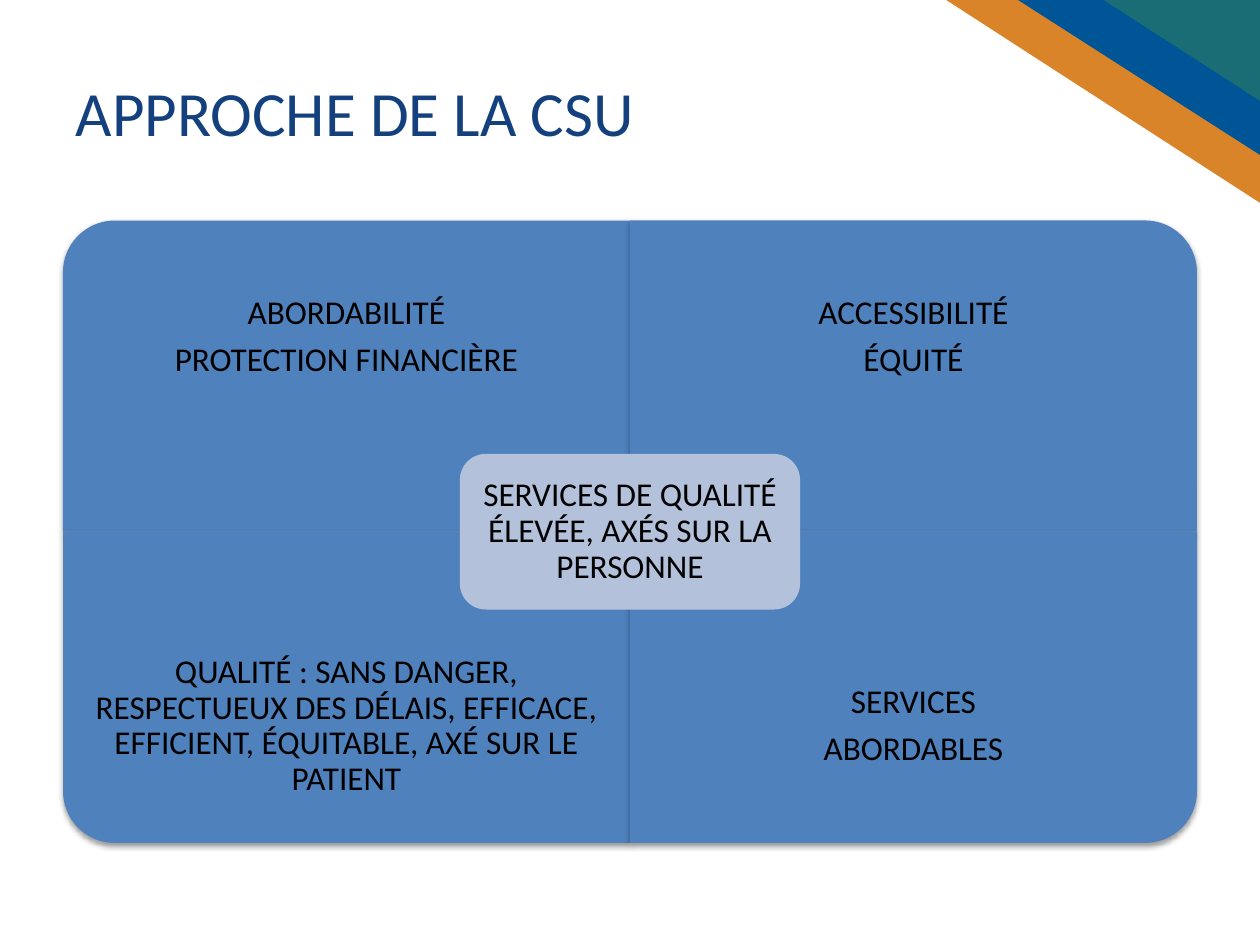
from dataclasses import dataclass

from lxml.etree import SubElement
from pptx import Presentation
from pptx.dml.color import RGBColor
from pptx.enum.shapes import MSO_SHAPE
from pptx.enum.text import MSO_ANCHOR, PP_ALIGN
from pptx.oxml.ns import qn
from pptx.shapes.autoshape import Shape
from pptx.slide import Slide
from pptx.util import Inches, Pt


@dataclass(frozen=True)
class Theme:
    font: str = "Calibri"
    title_size: float = 36
    label_size: float = 19
    line_spacing: float = 0.9
    space_after: float = 6.65
    title: str = "14417E"
    label: str = "000000"
    quadrant: str = "4F81BD"
    core: str = "B3C1DB"
    shadow: str = "000000"


@dataclass(frozen=True)
class Box:
    left: float
    top: float
    width: float
    height: float

    def lengths(self) -> tuple[Inches, ...]:
        return tuple(Inches(v) for v in (self.left, self.top, self.width, self.height))

    def inset(self, margin: float) -> "Box":
        return Box(self.left + margin, self.top + margin,
                   self.width - 2 * margin, self.height - 2 * margin)

    def turned(self) -> "Box":
        """Swap width and height around the same centre."""
        shift = (self.width - self.height) / 2
        return Box(self.left + shift, self.top - shift, self.height, self.width)


@dataclass(frozen=True)
class Stripe:
    width: float
    height: float
    color: str


@dataclass(frozen=True)
class Quadrant:
    column: int
    row: int
    rotation: int
    lines: tuple[str, ...]


THEME = Theme()
SLIDE_WIDTH, SLIDE_HEIGHT = 10, 7.5
MATRIX = Box(0.5, 1.75, 9, 4.94)
CELL_WIDTH, CELL_HEIGHT = MATRIX.width / 2, MATRIX.height / 2
LABEL_HEIGHT = CELL_HEIGHT * 0.75
CORE_WIDTH, CORE_HEIGHT = CELL_WIDTH * 0.6, CELL_HEIGHT / 2

STRIPES = (
    Stripe(2.49, 1.61, "D98429"),
    Stripe(1.92, 1.23, "005596"),
    Stripe(1.24, 0.8, "1B6D75"),
)
QUADRANTS = (
    Quadrant(0, 0, 270, ("ABORDABILITÉ", "PROTECTION FINANCIÈRE")),
    Quadrant(1, 0, 0, ("ACCESSIBILITÉ", "ÉQUITÉ")),
    Quadrant(0, 1, 180, ("QUALITÉ : SANS DANGER, RESPECTUEUX DES DÉLAIS, EFFICACE, "
                         "EFFICIENT, ÉQUITABLE, AXÉ SUR LE PATIENT",)),
    Quadrant(1, 1, 90, ("SERVICES", "ABORDABLES")),
)
CORE_LINES = ("SERVICES DE QUALITÉ ÉLEVÉE, AXÉS SUR LA PERSONNE",)


def add_filled(slide: Slide, kind: MSO_SHAPE, box: Box, color: str, rotation: int = 0) -> Shape:
    shape = slide.shapes.add_shape(kind, *box.lengths())
    shape.rotation = rotation
    shape.shadow.inherit = False
    shape.fill.solid()
    shape.fill.fore_color.rgb = RGBColor.from_string(color)
    shape.line.fill.background()
    return shape


def add_drop_shadow(shape: Shape) -> None:
    effects = shape.element.spPr.find(qn("a:effectLst"))
    shadow = SubElement(effects, qn("a:outerShdw"), blurRad=str(Pt(3.1)),
                        dist=str(Pt(1.6)), dir="5400000", rotWithShape="0")
    color = SubElement(shadow, qn("a:srgbClr"), val=THEME.shadow)
    SubElement(color, qn("a:alpha"), val="38000")


def add_label(slide: Slide, box: Box, lines: tuple[str, ...], margin: float) -> None:
    frame = slide.shapes.add_textbox(*box.lengths()).text_frame
    frame.word_wrap = True
    frame.vertical_anchor = MSO_ANCHOR.MIDDLE
    frame.margin_left = frame.margin_right = Inches(margin)
    frame.margin_top = frame.margin_bottom = Inches(margin)
    for index, line in enumerate(lines):
        paragraph = frame.add_paragraph() if index else frame.paragraphs[0]
        paragraph.alignment = PP_ALIGN.CENTER
        paragraph.line_spacing = THEME.line_spacing
        paragraph.space_after = Pt(THEME.space_after)
        add_run(paragraph, line, THEME.label_size, THEME.label)


def add_run(paragraph, text: str, size: float, color: str) -> None:
    run = paragraph.add_run()
    run.text = text
    run.font.name = THEME.font
    run.font.size = Pt(size)
    run.font.color.rgb = RGBColor.from_string(color)


def add_stripe(slide: Slide, stripe: Stripe) -> None:
    corner = Box(SLIDE_WIDTH - stripe.width, 0, stripe.width, stripe.height)
    add_filled(slide, MSO_SHAPE.RIGHT_TRIANGLE, corner, stripe.color, 180)


def set_title(slide: Slide, text: str) -> None:
    title = slide.shapes.title
    title.left, title.top, title.width, title.height = Box(0.5, 0.3, 8.27, 1.25).lengths()
    title.text_frame.vertical_anchor = MSO_ANCHOR.MIDDLE
    paragraph = title.text_frame.paragraphs[0]
    paragraph.alignment = PP_ALIGN.LEFT
    paragraph.line_spacing = THEME.line_spacing
    add_run(paragraph, text, THEME.title_size, THEME.title)


def add_quadrant(slide: Slide, quadrant: Quadrant) -> None:
    """Draw a cell whose rounded corner points outwards, with its label."""
    cell = Box(MATRIX.left + quadrant.column * CELL_WIDTH,
               MATRIX.top + quadrant.row * CELL_HEIGHT, CELL_WIDTH, CELL_HEIGHT)
    outline = cell.turned() if quadrant.rotation % 180 else cell
    add_drop_shadow(add_filled(slide, MSO_SHAPE.ROUND_1_RECTANGLE, outline,
                               THEME.quadrant, quadrant.rotation))
    label_top = cell.top + quadrant.row * (CELL_HEIGHT - LABEL_HEIGHT)
    add_label(slide, Box(cell.left, label_top, CELL_WIDTH, LABEL_HEIGHT),
              quadrant.lines, 0.15)


def add_core(slide: Slide) -> None:
    core = Box(MATRIX.left + (MATRIX.width - CORE_WIDTH) / 2,
               MATRIX.top + (MATRIX.height - CORE_HEIGHT) / 2, CORE_WIDTH, CORE_HEIGHT)
    add_filled(slide, MSO_SHAPE.ROUNDED_RECTANGLE, core, THEME.core)
    add_label(slide, core.inset(0.06), CORE_LINES, 0.08)


def main() -> None:
    presentation = Presentation()
    presentation.slide_width = Inches(SLIDE_WIDTH)
    presentation.slide_height = Inches(SLIDE_HEIGHT)
    slide = presentation.slides.add_slide(presentation.slide_layouts.get_by_name("Title Only"))
    for stripe in STRIPES:
        add_stripe(slide, stripe)
    set_title(slide, "APPROCHE DE LA CSU")
    for quadrant in QUADRANTS:
        add_quadrant(slide, quadrant)
    add_core(slide)
    presentation.save("out.pptx")


if __name__ == "__main__":
    main()
